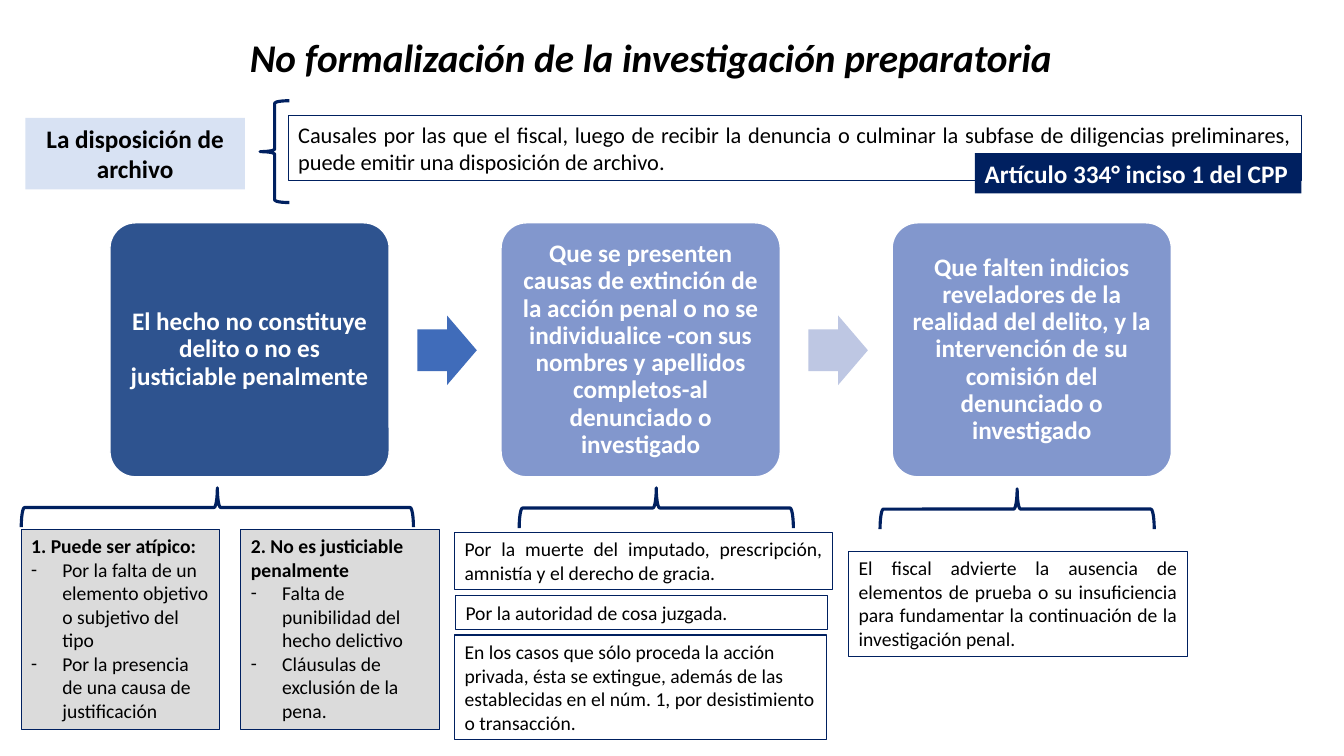
from dataclasses import dataclass
from typing import NamedTuple, Optional

import pptx
import pptx.dml.color
import pptx.enum.shapes
import pptx.enum.text
import pptx.oxml
import pptx.oxml.ns
import pptx.util

SHAPES = pptx.enum.shapes.MSO_SHAPE
ALIGN = pptx.enum.text.PP_ALIGN
ANCHOR = pptx.enum.text.MSO_ANCHOR


@dataclass(frozen=True)
class Theme:
    font: str = "Calibri"
    title_size: int = 28
    heading_size: int = 18
    lead_size: int = 16
    note_size: int = 14
    black: str = "000000"
    white: str = "FFFFFF"
    navy: str = "002060"
    pale_blue: str = "D8E2F3"
    grey: str = "DBDBDB"
    card_dark: str = "2E538F"
    card_light: str = "8297CD"
    arrow_dark: str = "406CBA"
    arrow_light: str = "BEC7E3"
    thin: float = 0.75
    thick: float = 2.25


class Area(NamedTuple):
    """Left, top, width and height in percent of the slide."""
    left: float
    top: float
    width: float
    height: float


@dataclass(frozen=True)
class Panel:
    area: Area
    text: str
    size: int
    fill: Optional[str] = None
    line: Optional[str] = None
    color: str = "000000"
    align: ALIGN = ALIGN.LEFT
    bold: bool = False
    italic: bool = False
    bullets: tuple[str, ...] = ()


class Card(NamedTuple):
    text: str
    fill: str


THEME = Theme()
WIDTH = pptx.util.Inches(13.333)
HEIGHT = pptx.util.Inches(7.5)

# Panels above and below the cards
HEADER = [
    Panel(Area(17.85, 3.73, 61.88, 7.6), "No formalización de la investigación preparatoria",
          THEME.title_size, bold=True, italic=True),
    Panel(Area(1.88, 15.6, 16.35, 9.47), "La disposición de archivo", THEME.heading_size,
          fill=THEME.pale_blue, align=ALIGN.CENTER, bold=True),
    Panel(Area(21.45, 15.33, 75.38, 8.53),
          "Causales por las que el fiscal, luego de recibir la denuncia o culminar la subfase de "
          "diligencias preliminares, puede emitir una disposición de archivo.",
          THEME.lead_size, line=THEME.navy, align=ALIGN.JUSTIFY),
    Panel(Area(72.53, 20.27, 24.3, 5.33), "Artículo 334° inciso 1 del CPP", THEME.heading_size,
          fill=THEME.navy, color=THEME.white, bold=True),
]
NOTES = [
    Panel(Area(1.58, 70, 14.78, 26.53), "1. Puede ser atípico:", THEME.note_size,
          fill=THEME.grey, line=THEME.navy, bold=True,
          bullets=("Por la falta de un elemento objetivo o subjetivo del tipo",
                   "Por la presencia de una causa de justificación")),
    Panel(Area(17.93, 70, 14.78, 26.53), "2. No es justiciable penalmente", THEME.note_size,
          fill=THEME.grey, line=THEME.navy, bold=True,
          bullets=("Falta de punibilidad del hecho delictivo",
                   "Cláusulas de exclusión de la pena.")),
    Panel(Area(33.83, 84, 27.68, 13.87),
          "En los casos que sólo proceda la acción privada, ésta se extingue, además de las "
          "establecidas en el núm. 1, por desistimiento o transacción.",
          THEME.note_size, line=THEME.navy),
    Panel(Area(33.83, 70.4, 28.13, 7.6),
          "Por la muerte del imputado, prescripción, amnistía y el derecho de gracia.",
          THEME.note_size, line=THEME.navy, align=ALIGN.JUSTIFY),
    Panel(Area(33.9, 78.8, 27.68, 4.53), "Por la autoridad de cosa juzgada.",
          THEME.note_size, line=THEME.navy),
    Panel(Area(63.15, 72.93, 25.2, 13.87),
          "El fiscal advierte la ausencia de elementos de prueba o su insuficiencia para "
          "fundamentar la continuación de la investigación penal.",
          THEME.note_size, line=THEME.navy, align=ALIGN.JUSTIFY),
]

# Cards and arrows share one horizontal step
CARD_STEP = 29.1
FIRST_CARD = Area(8.18, 29.47, 20.78, 33.6)
FIRST_ARROW = Area(31.05, 41.73, 4.43, 9.2)
CARDS = [
    Card("El hecho no constituye delito o no es justiciable penalmente", THEME.card_dark),
    Card("Que se presenten causas de extinción de la acción penal o no se individualice -con sus "
         "nombres y apellidos completos-al denunciado o investigado", THEME.card_light),
    Card("Que falten indicios reveladores de la realidad del delito, y la intervención de su "
         "comisión del denunciado o investigado", THEME.card_light),
]
ARROW_FILLS = [THEME.arrow_dark, THEME.arrow_light]

SIDE_BRACE = Area(19.35, 13.33, 2.18, 13.47)
UPWARD_BRACES = [
    Area(1.58, 64.53, 29.18, 5.2),
    Area(38.63, 64.53, 20.4, 5.33),
    Area(65.48, 64.67, 20.4, 5.33),
]


def rgb(value: str) -> pptx.dml.color.RGBColor:
    return pptx.dml.color.RGBColor.from_string(value)


def frame(area: Area) -> tuple[int, int, int, int]:
    return (int(WIDTH * area.left / 100), int(HEIGHT * area.top / 100),
            int(WIDTH * area.width / 100), int(HEIGHT * area.height / 100))


def add_shape(page, kind: SHAPES, bounds: tuple[int, int, int, int], fill: Optional[str] = None,
              line: Optional[str] = None, weight: float = THEME.thin):
    shape = page.shapes.add_shape(kind, *bounds)
    shape.shadow.inherit = False
    if fill:
        shape.fill.solid()
        shape.fill.fore_color.rgb = rgb(fill)
    else:
        shape.fill.background()
    if line:
        shape.line.color.rgb = rgb(line)
        shape.line.width = pptx.util.Pt(weight)
    else:
        shape.line.fill.background()
    return shape


def style(para, size: int, color: str, align: ALIGN, bold: bool, italic: bool = False) -> None:
    para.alignment = align
    for span in para.runs:
        span.font.name = THEME.font
        span.font.size = pptx.util.Pt(size)
        span.font.color.rgb = rgb(color)
        span.font.bold = bold
        span.font.italic = italic


def add_dash(para) -> None:
    properties = para._p.get_or_add_pPr()
    indent = pptx.util.Inches(0.31)
    properties.set("marL", str(indent))
    properties.set("indent", str(-indent))
    namespace = pptx.oxml.ns.nsdecls("a")
    properties.append(pptx.oxml.parse_xml(f'<a:buFont {namespace} typeface="{THEME.font}"/>'))
    properties.append(pptx.oxml.parse_xml(f'<a:buChar {namespace} char="-"/>'))


def draw_panel(page, panel: Panel) -> None:
    if panel.fill or panel.line:
        box = add_shape(page, SHAPES.RECTANGLE, frame(panel.area), panel.fill, panel.line)
    else:
        box = page.shapes.add_textbox(*frame(panel.area))
    text_frame = box.text_frame
    text_frame.word_wrap = True
    text_frame.vertical_anchor = ANCHOR.TOP
    text_frame.text = panel.text
    style(text_frame.paragraphs[0], panel.size, panel.color, panel.align, panel.bold, panel.italic)
    for bullet in panel.bullets:
        para = text_frame.add_paragraph()
        para.text = bullet
        add_dash(para)
        style(para, panel.size, panel.color, panel.align, False)


def draw_card(page, card: Card, area: Area) -> None:
    box = add_shape(page, SHAPES.ROUNDED_RECTANGLE, frame(area), card.fill, THEME.white, 1)
    box.adjustments[0] = 0.1
    text_frame = box.text_frame
    text_frame.word_wrap = True
    text_frame.vertical_anchor = ANCHOR.MIDDLE
    text_frame.margin_left = text_frame.margin_right = pptx.util.Inches(0.07)
    text_frame.margin_top = text_frame.margin_bottom = pptx.util.Inches(0.07)
    text_frame.text = card.text
    para = text_frame.paragraphs[0]
    para.line_spacing = 0.9
    style(para, THEME.heading_size, THEME.white, ALIGN.CENTER, True)


def draw_brace(page, area: Area, upward: bool = False) -> None:
    left, top, width, height = frame(area)
    if upward:  # swap the sides around the centre, then turn
        shift = (width - height) // 2
        left, top, width, height = left + shift, top - shift, height, width
    brace = add_shape(page, SHAPES.LEFT_BRACE, (left, top, width, height),
                      line=THEME.navy, weight=THEME.thick)
    brace.rotation = 90 if upward else 0


def main() -> None:
    deck = pptx.Presentation()
    deck.slide_width, deck.slide_height = WIDTH, HEIGHT
    page = deck.slides.add_slide(deck.slide_layouts[6])
    for index, card in enumerate(CARDS):
        draw_card(page, card, FIRST_CARD._replace(left=FIRST_CARD.left + index * CARD_STEP))
    for index, fill in enumerate(ARROW_FILLS):
        area = FIRST_ARROW._replace(left=FIRST_ARROW.left + index * CARD_STEP)
        arrow = add_shape(page, SHAPES.RIGHT_ARROW, frame(area), fill)
        arrow.adjustments[0] = 0.6
    for panel in HEADER + NOTES:
        draw_panel(page, panel)
    draw_brace(page, SIDE_BRACE)
    for area in UPWARD_BRACES:
        draw_brace(page, area, upward=True)
    deck.save("out.pptx")


if __name__ == "__main__":
    main()
